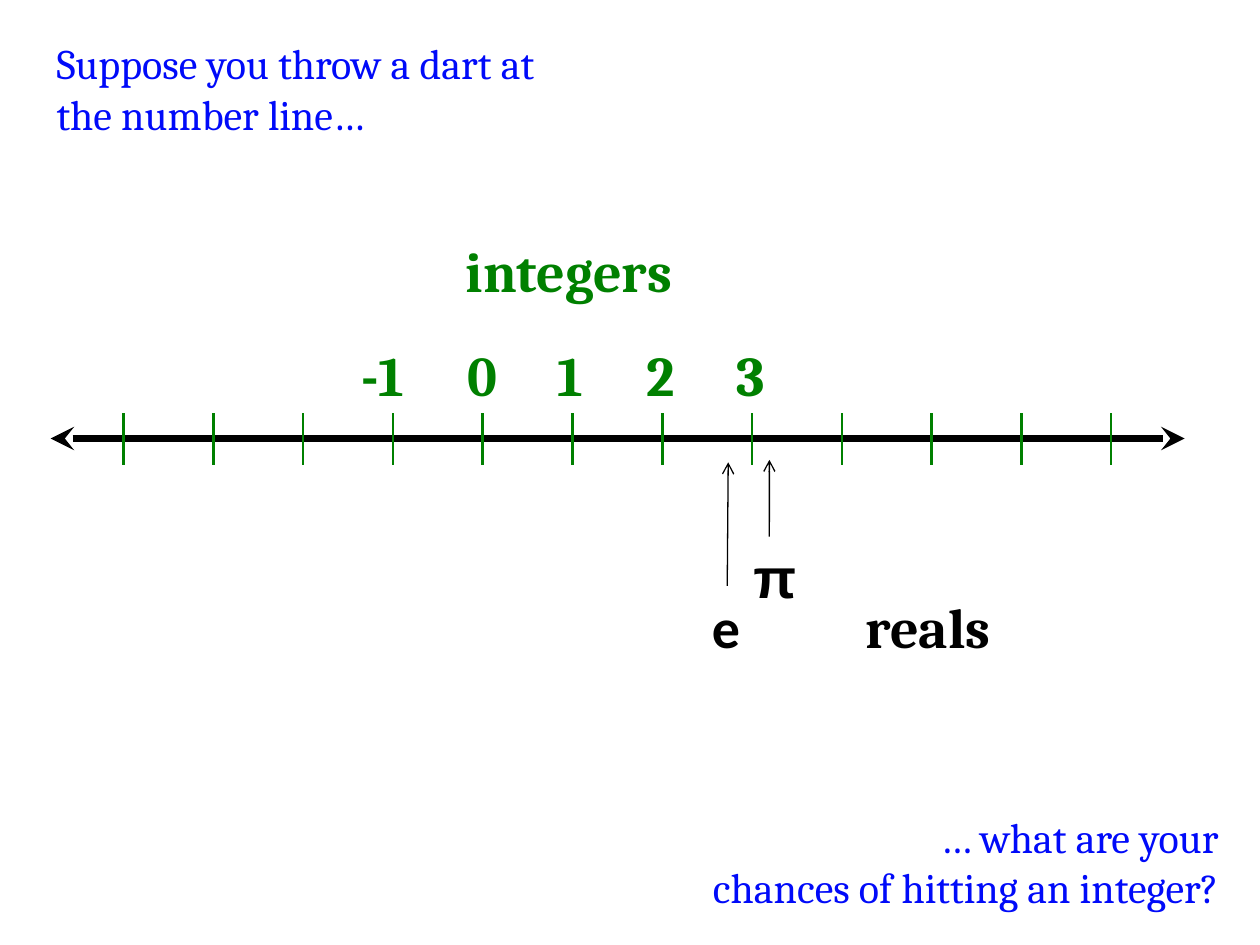
"""Build a slide showing integers and reals on a number line."""
import pptx
import pptx.dml.color
import pptx.enum.shapes
import pptx.enum.text
import pptx.oxml
import pptx.oxml.ns
import pptx.util

Cm = pptx.util.Cm
Pt = pptx.util.Pt
BLACK = pptx.dml.color.RGBColor(0x00, 0x00, 0x00)
GREEN = pptx.dml.color.RGBColor(0x00, 0x80, 0x00)
BLUE = pptx.dml.color.RGBColor(0x00, 0x0A, 0xF9)
LABEL_HEIGHT = 1.63
TICK_LEFT, TICK_GAP, ZERO_TICK = 2.49, 1.81, 4


def add_text(text, x, y, w, h, color, font="Cambria", size=32, bold=True, wrap=False):
    sp = s.shapes.add_textbox(Cm(x), Cm(y), Cm(w), Cm(h))
    tf = sp.text_frame
    tf.word_wrap = wrap
    tf.auto_size = pptx.enum.text.MSO_AUTO_SIZE.SHAPE_TO_FIT_TEXT
    p = tf.paragraphs[0]
    p.text = text
    p.font.name = font
    p.font.size = Pt(size)
    p.font.bold = bold
    p.font.color.rgb = color
    return sp


def add_line(x1, y1, x2, y2, color, width, **ends):
    sp = s.shapes.add_connector(
        pptx.enum.shapes.MSO_CONNECTOR.STRAIGHT, Cm(x1), Cm(y1), Cm(x2), Cm(y2))
    sp.line.color.rgb = color
    sp.line.width = Pt(width)
    ln = sp.line._get_or_add_ln()
    for end, kind in ends.items():
        ln.append(pptx.oxml.parse_xml(
            f'<a:{end} {pptx.oxml.ns.nsdecls("a")} type="{kind}"/>'))
    sp._element.spPr.append(pptx.oxml.parse_xml(
        f'<a:effectLst {pptx.oxml.ns.nsdecls("a")}/>'))
    return sp


prs = pptx.Presentation()
prs.slide_width = Cm(25.4)
prs.slide_height = Cm(19.05)
s = prs.slides.add_slide(prs.slide_layouts[6])

add_line(1.02, 8.84, 23.88, 8.84, BLACK, 4.5, headEnd="stealth", tailEnd="stealth")
for i in range(12):
    x = TICK_LEFT + i * TICK_GAP
    add_line(x, 8.33, x, 9.37, GREEN, 1.5)

add_text("integers", 9.14, 4.65, 4.83, LABEL_HEIGHT, GREEN)
add_text("-1", 7.04, 6.73, 1.57, LABEL_HEIGHT, GREEN)
for n in range(4):
    x = TICK_LEFT + (ZERO_TICK + n) * TICK_GAP - 0.56
    add_text(str(n), x, 6.73, 1.19, LABEL_HEIGHT, GREEN)

add_text("reals", 17.2, 11.81, 3.12, LABEL_HEIGHT, BLACK)
for name, font, x, y, w, tip_x, tip_y in [
    ("π", "Arial", 14.94, 10.82, 1.14, 15.51, 9.27),
    ("e", "Calibri", 14.1, 11.81, 1.12, 14.68, 9.32),
]:
    label = add_text(name, x, y, w, LABEL_HEIGHT, BLACK, font)
    arrow = add_line(x + w / 2, y, tip_x, tip_y, BLACK, 0.75, tailEnd="arrow")
    arrow.begin_connect(label, 0)

add_text("Suppose you throw a dart at the number line…",
         0.89, 0.64, 10.82, 2.31, BLUE, size=24, bold=False, wrap=True)
sp = add_text("… what are your chances of hitting an integer?",
              11.81, 16.23, 13, 2.31, BLUE, size=24, bold=False, wrap=True)
p = sp.text_frame.paragraphs[0]
p.alignment = pptx.enum.text.PP_ALIGN.RIGHT
p._p.get_or_add_pPr().set("indent", str(Cm(5)))

prs.save("out.pptx")
